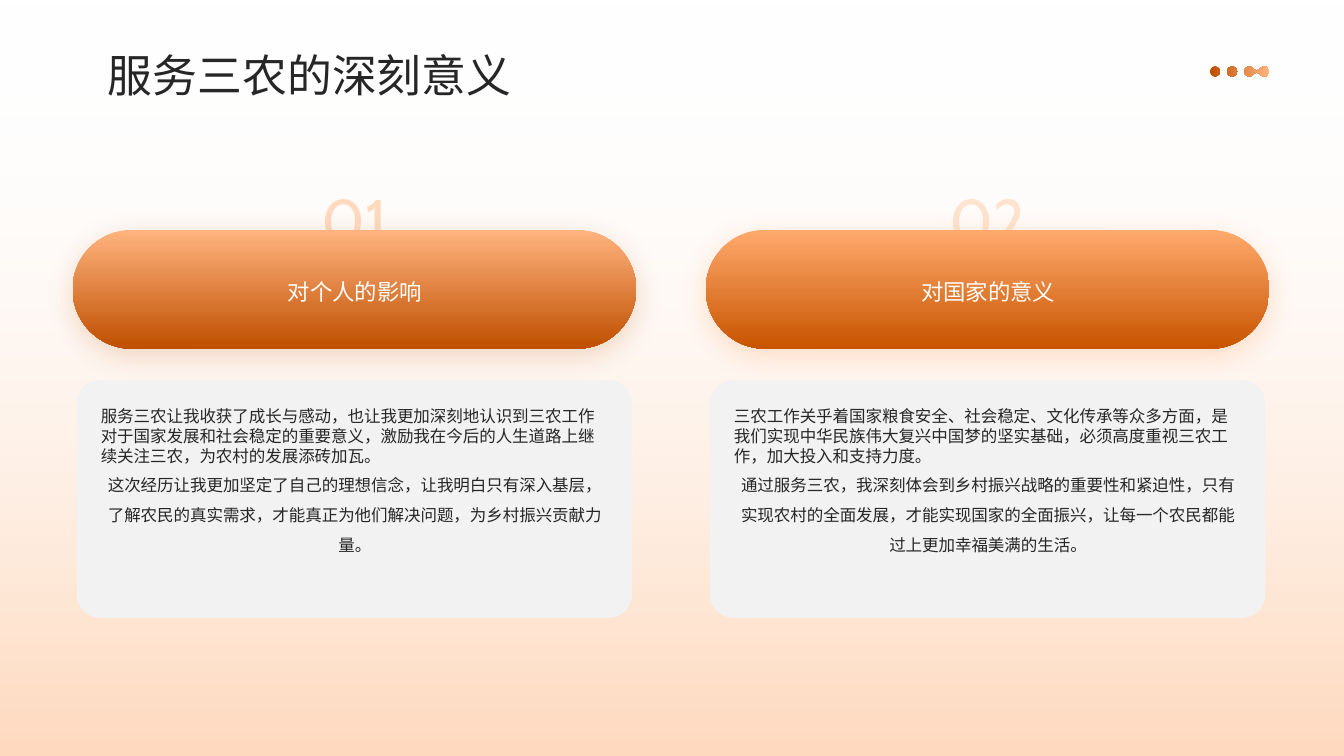
from dataclasses import dataclass
from math import cos, radians, sin

from lxml import etree
from pptx import Presentation
from pptx.dml.color import RGBColor
from pptx.enum.shapes import MSO_SHAPE
from pptx.enum.text import MSO_ANCHOR, MSO_AUTO_SIZE, PP_ALIGN
from pptx.oxml.ns import qn
from pptx.util import Inches, Pt

RECTANGLE = MSO_SHAPE.RECTANGLE
ROUNDED = MSO_SHAPE.ROUNDED_RECTANGLE
TOP, MIDDLE = MSO_ANCHOR.TOP, MSO_ANCHOR.MIDDLE
FIXED, GROW = MSO_AUTO_SIZE.NONE, MSO_AUTO_SIZE.SHAPE_TO_FIT_TEXT
LEFT, CENTER = PP_ALIGN.LEFT, PP_ALIGN.CENTER

WHITE = RGBColor(0xFF, 0xFF, 0xFF)
INK = RGBColor(0x26, 0x26, 0x26)
PANEL_GRAY = RGBColor(0xF2, 0xF2, 0xF2)
PEACH = RGBColor(0xFF, 0xDA, 0xBF)
PALE_PEACH = RGBColor(0xFF, 0xE3, 0xCE)
LIGHT_ORANGE = RGBColor(0xFF, 0xB4, 0x7F)
DARK_ORANGE = RGBColor(0xBF, 0x4F, 0x00)
SOFT_ORANGE = RGBColor(0xFF, 0xAA, 0x6D)
DEEP_ORANGE = RGBColor(0xC8, 0x54, 0x00)
BRIGHT_ORANGE = RGBColor(0xFF, 0x72, 0x0C)

TEXT_FONT = "Noto Sans CJK SC"
NUMBER_FONT = "Cabin"
DOWNWARD, RIGHTWARD = 270, 0


@dataclass
class Topic:
    number: str
    heading: str
    statement: str
    detail: str
    number_color: RGBColor
    pill_colors: tuple
    shadow_color: RGBColor


TOPICS = [
    Topic(
        "01",
        "对个人的影响",
        "服务三农让我收获了成长与感动，也让我更加深刻地认识到三农工作对于国家发展和社会稳定的重要意义，激励我在今后的人生道路上继续关注三农，为农村的发展添砖加瓦。",
        "这次经历让我更加坚定了自己的理想信念，让我明白只有深入基层，了解农民的真实需求，才能真正为他们解决问题，为乡村振兴贡献力量。",
        PEACH, (LIGHT_ORANGE, DARK_ORANGE), DARK_ORANGE,
    ),
    Topic(
        "02",
        "对国家的意义",
        "三农工作关乎着国家粮食安全、社会稳定、文化传承等众多方面，是我们实现中华民族伟大复兴中国梦的坚实基础，必须高度重视三农工作，加大投入和支持力度。",
        "通过服务三农，我深刻体会到乡村振兴战略的重要性和紧迫性，只有实现农村的全面发展，才能实现国家的全面振兴，让每一个农民都能过上更加幸福美满的生活。",
        PALE_PEACH, (SOFT_ORANGE, DEEP_ORANGE), BRIGHT_ORANGE,
    ),
]


def fill_gradient(shape, colors, angle):
    shape.fill.gradient()
    shape.fill.gradient_angle = angle
    for stop, color in zip(shape.fill.gradient_stops, colors):
        stop.color.rgb = color


def add_panel(slide, kind, left, top, width, height, corner=None):
    shape = slide.shapes.add_shape(
        kind, Inches(left), Inches(top), Inches(width), Inches(height))
    shape.shadow.inherit = False
    shape.line.fill.background()
    if corner is not None:
        shape.adjustments[0] = corner
    return shape


def add_backdrop(slide, width, height):
    backdrop = add_panel(slide, RECTANGLE, 0, 0, width, height)
    fill_gradient(backdrop, (WHITE, PEACH), DOWNWARD)
    first_color = next(backdrop.element.spPr.iter(qn("a:srgbClr")))
    etree.SubElement(first_color, qn("a:alpha"), val="0")


def add_glow(shape, color):
    effects = shape.element.spPr.find(qn("a:effectLst"))
    shadow = etree.SubElement(
        effects, qn("a:outerShdw"), blurRad=str(Pt(20)), dist=str(Pt(5)),
        dir="5400000", algn="t", rotWithShape="0")
    tone = etree.SubElement(shadow, qn("a:srgbClr"), val=str(color))
    etree.SubElement(tone, qn("a:alpha"), val="20000")


def prepare_frame(frame, anchor, auto_size=FIXED):
    frame.margin_left = frame.margin_right = 0
    frame.margin_top = frame.margin_bottom = 0
    frame.word_wrap = True
    frame.auto_size = auto_size
    frame.vertical_anchor = anchor


def write(paragraph, text, size, color, alignment, spacing=None, font=TEXT_FONT):
    paragraph.alignment = alignment
    paragraph.line_spacing = spacing
    run = paragraph.add_run()
    run.text = text
    run.font.size = Pt(size)
    run.font.color.rgb = color
    run.font.name = font
    etree.SubElement(run.font._element, qn("a:ea"), typeface=font)


def add_text_frame(slide, left, top, width, height, anchor=TOP, auto_size=FIXED):
    box = slide.shapes.add_textbox(
        Inches(left), Inches(top), Inches(width), Inches(height))
    prepare_frame(box.text_frame, anchor, auto_size)
    return box.text_frame


def add_topic(slide, topic, left, top, width):
    number = add_text_frame(slide, left + 1.62, top, 2.36, 0.73, auto_size=GROW)
    write(number.paragraphs[0], topic.number, 44, topic.number_color, CENTER,
          font=NUMBER_FONT)

    panel = add_panel(slide, ROUNDED, left + 0.04, top + 1.96,
                      width - 0.08, 2.36, 0.1)
    panel.fill.solid()
    panel.fill.fore_color.rgb = PANEL_GRAY

    pill = add_panel(slide, ROUNDED, left, top + 0.47, width, 1.18, 0.5)
    fill_gradient(pill, topic.pill_colors, DOWNWARD)
    add_glow(pill, topic.shadow_color)

    body = add_text_frame(slide, left + 0.28, top + 2.22, 5.04, 1.74)
    write(body.paragraphs[0], topic.statement, 11.8, INK, LEFT)
    write(body.add_paragraph(), topic.detail, 11.8, INK, CENTER, 1.5)

    heading = add_text_frame(slide, left + 0.44, top + 0.62, 4.72, 0.87, MIDDLE)
    write(heading.paragraphs[0], topic.heading, 16, WHITE, CENTER, 1.2)


def place_title(slide, text, left, top, width, height):
    title = slide.shapes.title
    title.left, title.top = Inches(left), Inches(top)
    title.width, title.height = Inches(width), Inches(height)
    title.element.getparent().append(title.element)
    prepare_frame(title.text_frame, MIDDLE)
    write(title.text_frame.paragraphs[0], text, 32, INK, LEFT, 1.1)


def arc(center_x, center_y, radius, start, end):
    return [(Inches(center_x + radius * cos(radians(angle))),
             Inches(center_y + radius * sin(radians(angle))))
            for angle in range(start, end + 1, 30)]


def add_dots(slide, left, top):
    radius = 0.05
    middle = top + radius
    first, second, third, fourth = [
        left + offset for offset in (0.05, 0.22, 0.39, 0.54)]
    waist = Inches((third + fourth) / 2)
    joined = (arc(third, middle, radius, 30, 330)
              + [(waist, Inches(middle - 0.01))]
              + arc(fourth, middle, radius, 210, 510)
              + [(waist, Inches(middle + 0.01))])
    contours = [arc(first, middle, radius, 0, 330),
                arc(second, middle, radius, 0, 330), joined]
    builder = slide.shapes.build_freeform(*contours[0][0])
    for index, contour in enumerate(contours):
        if index:
            builder.move_to(*contour[0])
        builder.add_line_segments(contour[1:], close=True)
    dots = builder.convert_to_shape()
    dots.shadow.inherit = False
    dots.line.fill.background()
    fill_gradient(dots, (DARK_ORANGE, LIGHT_ORANGE), RIGHTWARD)


def main():
    presentation = Presentation()
    presentation.slide_width = Inches(13.33)
    presentation.slide_height = Inches(7.5)
    slide = presentation.slides.add_slide(presentation.slide_layouts[5])

    add_backdrop(slide, 13.34, 7.5)
    for index, topic in enumerate(TOPICS):
        add_topic(slide, topic, 0.72 + 6.28 * index, 1.81, 5.59)
    place_title(slide, "服务三农的深刻意义", 1.07, 0.46, 10.76, 0.51)
    add_dots(slide, 12, 0.66)

    presentation.save("out.pptx")


if __name__ == "__main__":
    main()
